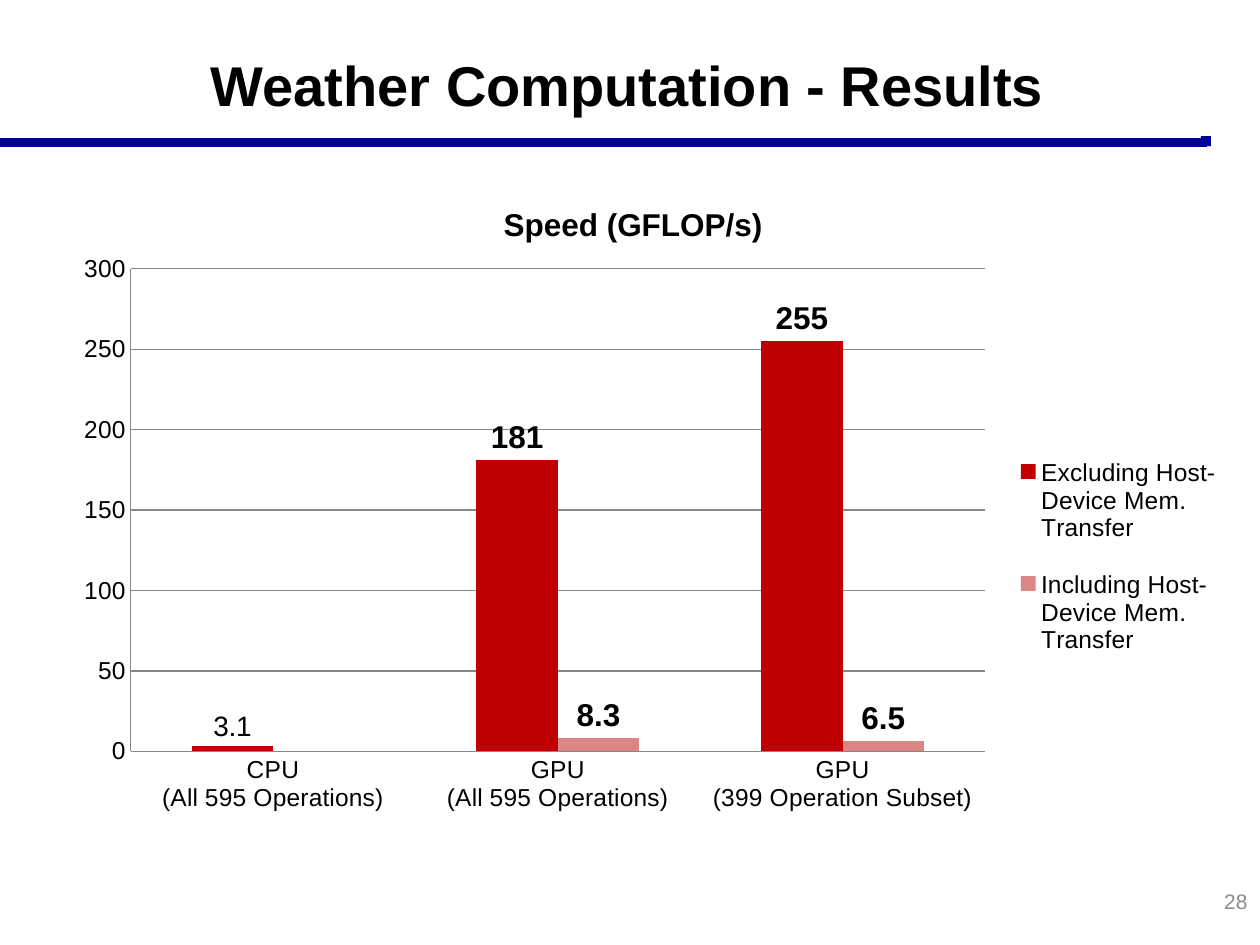
"""Build the weather computation results slide with its speed chart."""
from lxml import etree
from pptx import Presentation
from pptx.chart.data import CategoryChartData
from pptx.dml.color import RGBColor
from pptx.enum.chart import XL_CHART_TYPE, XL_LABEL_POSITION, XL_LEGEND_POSITION, XL_TICK_MARK
from pptx.enum.shapes import MSO_CONNECTOR, MSO_SHAPE
from pptx.enum.text import MSO_ANCHOR, PP_ALIGN
from pptx.oxml.ns import qn
from pptx.util import Inches, Pt

COLUMNS = XL_CHART_TYPE.COLUMN_CLUSTERED
OUTSIDE_END = XL_LABEL_POSITION.OUTSIDE_END
LEGEND_RIGHT = XL_LEGEND_POSITION.RIGHT
NO_TICK = XL_TICK_MARK.NONE
STRAIGHT = MSO_CONNECTOR.STRAIGHT
RECTANGLE = MSO_SHAPE.RECTANGLE
MIDDLE = MSO_ANCHOR.MIDDLE
CENTER, RIGHT = PP_ALIGN.CENTER, PP_ALIGN.RIGHT

FONT = "Arial"
COLORS = {
    "rule": "000099",
    "text": "000000",
    "number": "8C8C8C",
    "grid": "878787",
    "excluding": "C00000",
    "including": "DB8585",
}
RGB = {name: RGBColor.from_string(value) for name, value in COLORS.items()}


def add_text(slide, box, text, size, color, align, bold=False):
    frame = slide.shapes.add_textbox(*map(Inches, box)).text_frame
    frame.word_wrap = True
    frame.vertical_anchor = MIDDLE
    paragraph = frame.paragraphs[0]
    paragraph.alignment = align
    run = paragraph.add_run()
    run.text = text
    run.font.name = FONT
    run.font.size = Pt(size)
    run.font.bold = bold
    run.font.color.rgb = RGB[color]


def set_layout(parent, index, box, inner=False):
    for old in parent.findall(qn("c:layout")):
        parent.remove(old)
    layout = etree.Element(qn("c:layout"))
    manual = etree.SubElement(layout, qn("c:manualLayout"))
    settings = [("layoutTarget", "inner")] if inner else []
    settings += [("xMode", "edge"), ("yMode", "edge"), *zip("xywh", box)]
    for tag, value in settings:
        etree.SubElement(manual, qn(f"c:{tag}")).set("val", str(value))
    parent.insert(index, layout)


prs = Presentation()
prs.slide_width, prs.slide_height = Inches(10), Inches(7.5)
slide = prs.slides.add_slide(prs.slide_layouts[6])

rule = slide.shapes.add_connector(STRAIGHT, 0, Inches(1.13), Inches(9.58), Inches(1.13))
rule.line.color.rgb = RGB["rule"]
rule.line.width = Pt(5)
etree.SubElement(rule._element.spPr, qn("a:effectLst"))

rule_end = slide.shapes.add_shape(
    RECTANGLE, Inches(9.53), Inches(1.08), Inches(0.08), Inches(0.08))
rule_end.shadow.inherit = False
rule_end.fill.solid()
rule_end.fill.fore_color.rgb = RGB["rule"]
rule_end.line.fill.background()

add_text(slide, (7.67, 6.95, 2.33, 0.4), "28", 12, "number", RIGHT)
add_text(slide, (1.04, 0.21, 7.88, 0.92), "Weather Computation - Results",
         32, "text", CENTER, bold=True)

speeds = CategoryChartData()
speeds.categories = [
    "CPU\n(All 595 Operations)",
    "GPU\n(All 595 Operations)",
    "GPU\n(399 Operation Subset)",
]
speeds.add_series("Excluding Host-Device Mem. Transfer", (3.1, 181, 255))
speeds.add_series("Including Host-Device Mem. Transfer", (None, 8.3, 6.5))
chart = slide.shapes.add_chart(
    COLUMNS, Inches(0.21), Inches(1.4), Inches(9.63), Inches(5.92), speeds).chart
chart.font.name = FONT
chart.font.size = Pt(10)
chart.font.color.rgb = RGB["text"]

chart.has_title = True
heading = chart.chart_title.text_frame.paragraphs[0].add_run()
heading.text = "Speed (GFLOP/s)"
heading.font.name = FONT
heading.font.size = Pt(18)
heading.font.bold = True
heading.font.color.rgb = RGB["text"]

for axis in (chart.category_axis, chart.value_axis):
    axis.major_tick_mark = axis.minor_tick_mark = NO_TICK
    axis.tick_labels.font.size = Pt(14)
    axis.format.line.color.rgb = RGB["grid"]
chart.value_axis.minimum_scale = 0
chart.value_axis.maximum_scale = 300
chart.value_axis.major_unit = 50
chart.value_axis.has_major_gridlines = True
chart.value_axis.major_gridlines.format.line.color.rgb = RGB["grid"]

columns = chart.plots[0]
columns.gap_width = 150
columns.overlap = 0
columns.vary_by_categories = False
for series, color in zip(columns.series, ("excluding", "including")):
    series.format.fill.solid()
    series.format.fill.fore_color.rgb = RGB[color]
    labels = series.data_labels
    labels.show_value = True
    labels.position = OUTSIDE_END
    labels.font.size = Pt(18)
    labels.font.bold = True

cpu_label = columns.series[0].points[0].data_label
cpu_label.font.size = Pt(16)
cpu_label.font.bold = False
cpu_label.position = OUTSIDE_END

chart.has_legend = True
chart.legend.position = LEGEND_RIGHT
chart.legend.include_in_layout = False
chart.legend.font.size = Pt(14)
set_layout(chart.legend._element, 1, (0.81, 0.34, 0.18, 0.34))
set_layout(chart._chartSpace.chart.plotArea, 0, (0.086, 0.124, 0.704, 0.647), inner=True)

prs.save("out.pptx")
